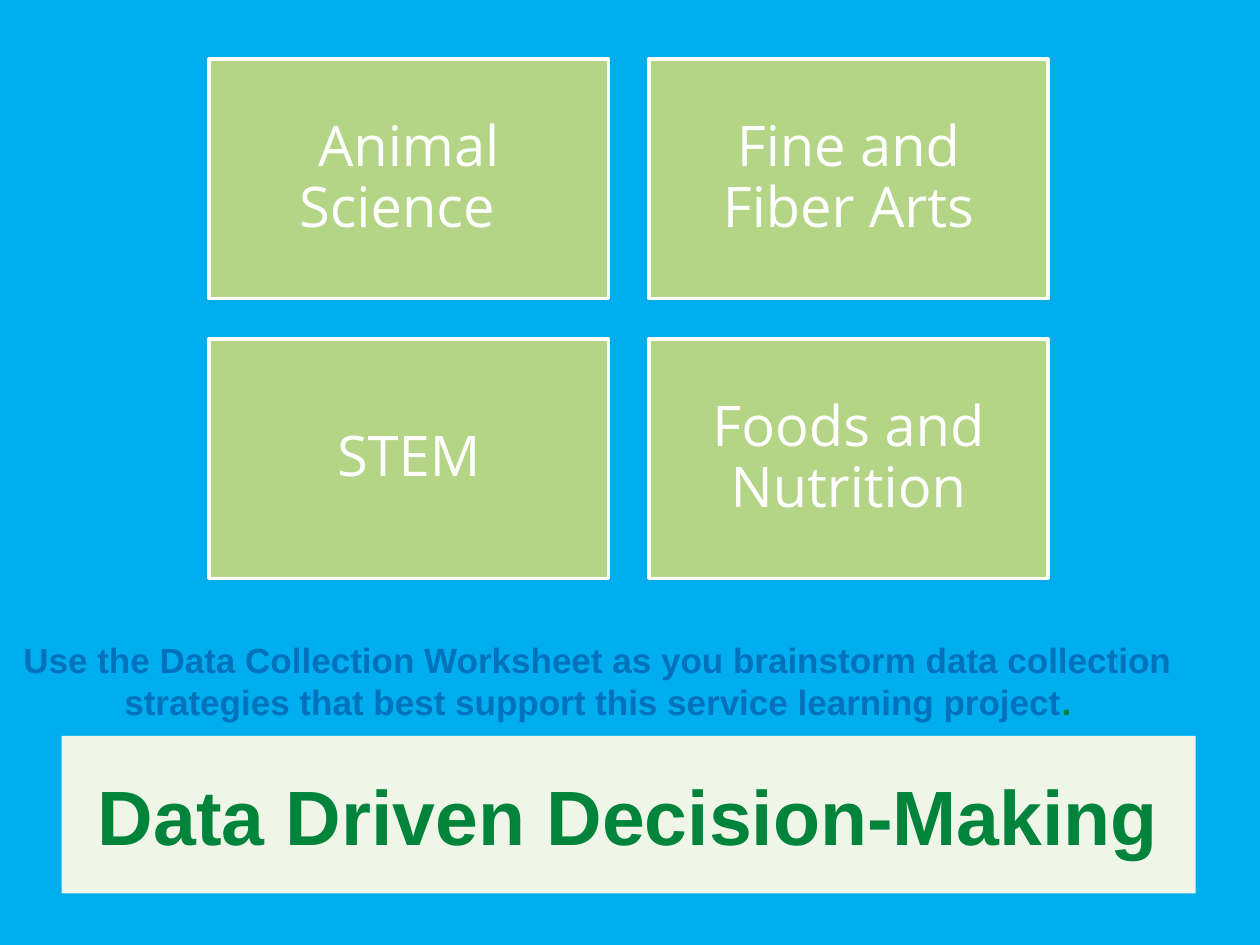
import pptx
import pptx.util
import pptx.dml.color
import pptx.enum.shapes
import pptx.enum.text

Inches = pptx.util.Inches
Pt = pptx.util.Pt
RGBColor = pptx.dml.color.RGBColor
RECT = pptx.enum.shapes.MSO_SHAPE.RECTANGLE
MIDDLE = pptx.enum.text.MSO_ANCHOR.MIDDLE
CENTER = pptx.enum.text.PP_ALIGN.CENTER

SKY = RGBColor(0x00, 0xAE, 0xEF)
LIME = RGBColor(0xB4, 0xD4, 0x86)
CREAM = RGBColor(0xF0, 0xF6, 0xE7)
GREEN = RGBColor(0x00, 0x83, 0x3B)
BLUE = RGBColor(0x00, 0x72, 0xBC)
WHITE = RGBColor(0xFF, 0xFF, 0xFF)


def write(shape, runs, font, bold):
    shape.text_frame.word_wrap = True
    para = shape.text_frame.paragraphs[0]
    para.alignment = CENTER
    for text, size, color in runs:
        run = para.add_run()
        run.text = text
        run.font.name = font
        run.font.size = Pt(size)
        run.font.bold = bold
        run.font.color.rgb = color
    return para


deck = pptx.Presentation()
deck.slide_width = Inches(10)
deck.slide_height = Inches(7.5)
slide = deck.slides.add_slide(deck.slide_layouts[6])
slide.background.fill.solid()
slide.background.fill.fore_color.rgb = SKY

title = slide.shapes.add_textbox(Inches(0.49), Inches(5.84), Inches(9), Inches(1.25))
title.fill.solid()
title.fill.fore_color.rgb = CREAM
title.text_frame.vertical_anchor = MIDDLE
write(title, [("Data Driven Decision-Making", 44, GREEN)], "Arial", True)

topics = [
    [("Animal Science ", 32, WHITE), (" ", 20, WHITE)],
    [("Fine and Fiber Arts", 32, WHITE)],
    [("STEM", 32, WHITE)],
    [("Foods and Nutrition", 32, WHITE)],
]
for i, runs in enumerate(topics):
    row, col = divmod(i, 2)
    card = slide.shapes.add_shape(
        RECT, Inches(1.66 + 3.49 * col), Inches(0.47 + 2.22 * row), Inches(3.17), Inches(1.9))
    card.shadow.inherit = False
    card.fill.solid()
    card.fill.fore_color.rgb = LIME
    card.line.color.rgb = WHITE
    card.line.width = Pt(2)
    frame = card.text_frame
    frame.vertical_anchor = MIDDLE
    frame.margin_left = frame.margin_right = Inches(0.13)
    frame.margin_top = frame.margin_bottom = Inches(0.13)
    write(card, runs, "Open Sans", False).line_spacing = 0.9

note = slide.shapes.add_textbox(Inches(-0.25), Inches(5.02), Inches(9.99), Inches(0.77))
write(note, [
    ("Use the Data Collection Worksheet as you brainstorm data collection "
     "strategies that best support this service learning project", 20, BLUE),
    (".", 20, GREEN),
], "Arial", True)

deck.save("out.pptx")
